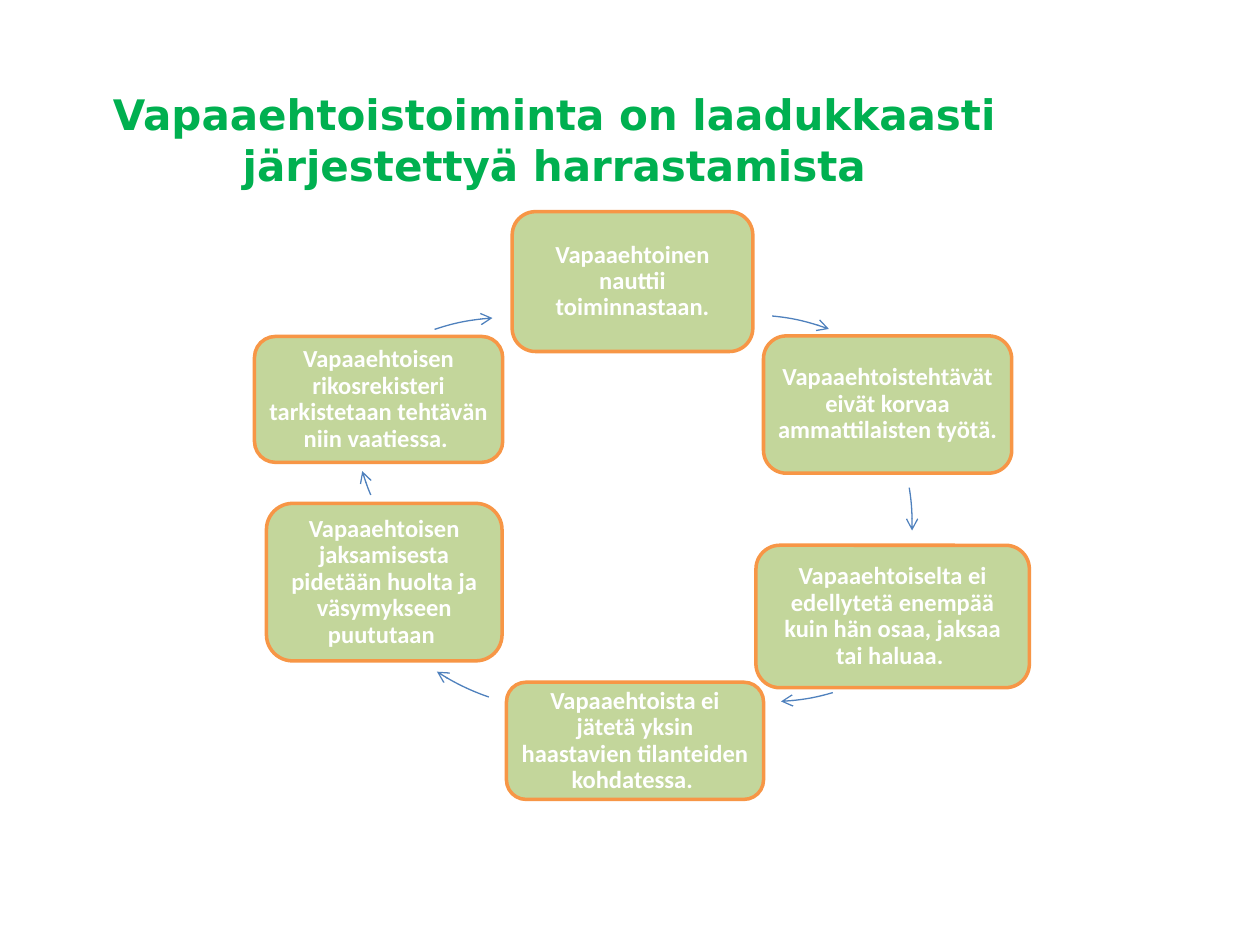
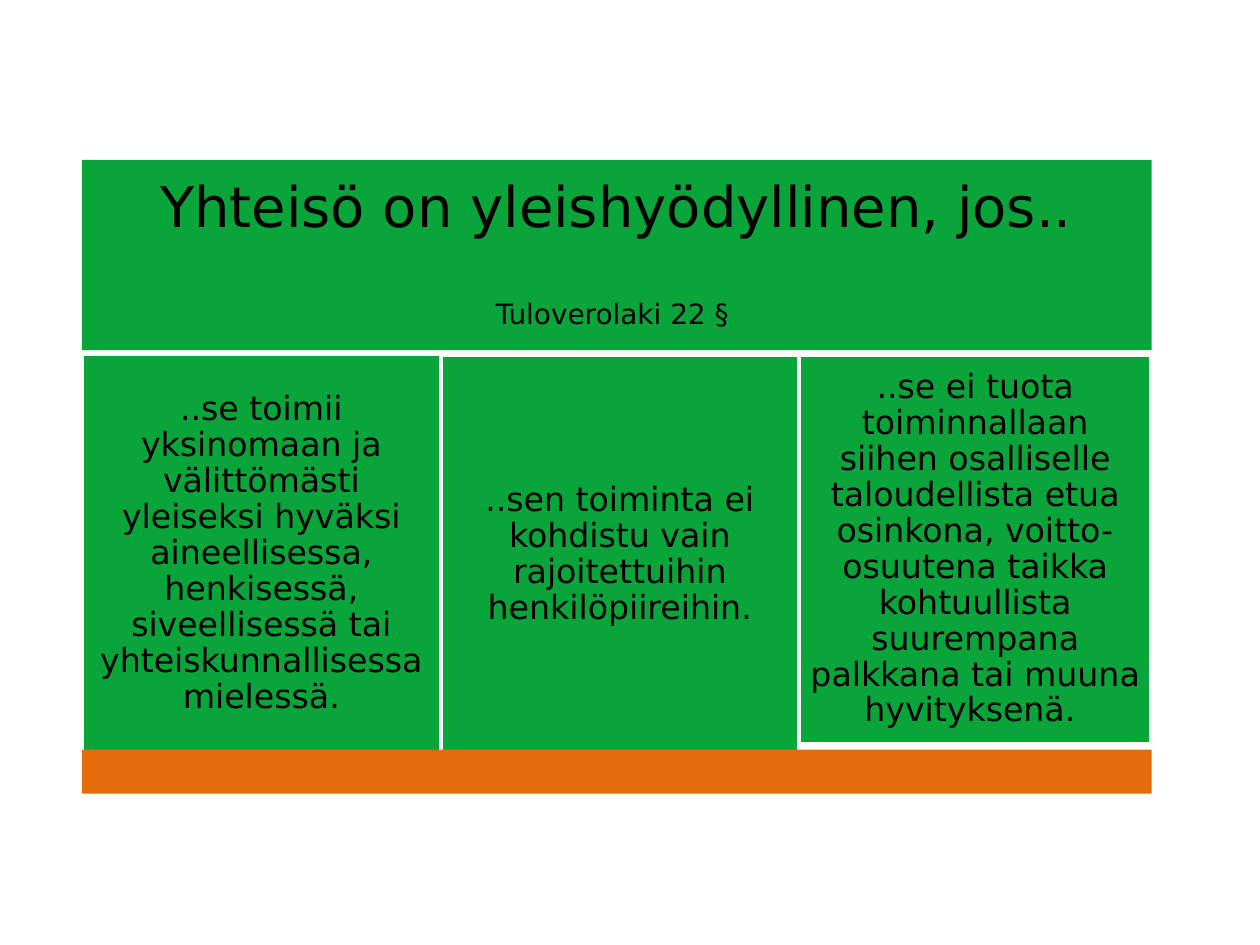
"""Build two slides about volunteering: a cycle of principles and a table of conditions."""
from dataclasses import dataclass
from math import cos, radians, sin
from typing import Any, NamedTuple

from lxml import etree
from pptx import Presentation
from pptx.dml import color
from pptx.enum import shapes, text
from pptx.oxml import ns
from pptx.util import Emu, Inches, Pt

COLORS = {
    "title": "00B050", "green": "0AA53A", "orange": "E46C0A", "leaf": "C3D69B",
    "rim": "F79646", "arrow": "4F81BD", "white": "FFFFFF", "black": "000000",
}
WIDTH, HEIGHT = Inches(10), Inches(7.5)
ARC_RADIUS = round(0.183 * WIDTH)
ANGLE_UNIT = 60000
TITLE_ONLY = 5
BAND_LEFT, BAND_WIDTH = 6.5, 84.9
COLUMN_LEFT, COLUMN_STEP = 6.55, 28.45


class Area(NamedTuple):
    """A place in percent of the slide's width and height."""
    left: float
    top: float
    width: float
    height: float


@dataclass(frozen=True)
class Style:
    """The look of a text: font, colour, spacing and inner margin in inches."""
    font: str
    size: float
    ink: str
    bold: bool = False
    spacing: float = 1.0
    margin: float = 0.05


@dataclass(frozen=True)
class Card:
    """A filled shape with its text."""
    area: Area
    words: str


@dataclass(frozen=True)
class Arc:
    """An arrow on a circle, with its centre in percent and clockwise degrees from the top."""
    across: float
    down: float
    start: float
    end: float


HEADLINE = Style("DejaVu Sans", 24, "title", bold=True)
BANNER = Style("DejaVu Sans", 32, "black", spacing=0.9, margin=0.13)
BANNER_NOTE = Style("DejaVu Sans", 16, "black", spacing=0.9, margin=0.13)
PRINCIPLE = Style("Calibri", 14, "white", bold=True, spacing=0.9, margin=0.06)
CONDITION = Style("DejaVu Sans", 19, "black", spacing=0.9, margin=0.08)

PRINCIPLES = [
    Card(Area(40.65, 22.4, 19.1, 14.8), "Vapaaehtoinen nauttii toiminnastaan."),
    Card(Area(60.6, 35.55, 19.7, 14.53),
         "Vapaaehtoistehtävät eivät korvaa ammattilaisten työtä. "),
    Card(Area(60, 57.7, 21.7, 15.07),
         "Vapaaehtoiselta ei edellytetä enempää kuin hän osaa, jaksaa tai haluaa. "),
    Card(Area(40.2, 72.2, 20.4, 12.4),
         "Vapaaehtoista ei jätetä yksin haastavien tilanteiden kohdatessa. "),
    Card(Area(21.15, 53.27, 18.7, 16.67),
         "Vapaaehtoisen jaksamisesta pidetään huolta ja väsymykseen puututaan "),
    Card(Area(20.2, 35.6, 19.7, 13.33),
         "Vapaaehtoisen rikosrekisteri tarkistetaan tehtävän niin vaatiessa. "),
]
ARCS = [
    Arc(59.5, 57.73, 5.6, 20.1), Arc(54.1, 55.47, 80.9, 91.6),
    Arc(61, 49.87, 163.8, 176.9), Arc(44.7, 50.67, 198.8, 213.2),
    Arc(46.3, 42.93, 247.2, 253.5), Arc(40.3, 58, 341.5, 356.2),
]
CONDITIONS = [
    Card(Area(COLUMN_LEFT, 37.47, 28.4, 42.27),
         "..se toimii yksinomaan ja välittömästi yleiseksi hyväksi aineellisessa, "
         "henkisessä, siveellisessä tai yhteiskunnallisessa mielessä."),
    Card(Area(COLUMN_LEFT + COLUMN_STEP, 37.6, 28.4, 42.27),
         "..sen toiminta ei kohdistu vain rajoitettuihin henkilöpiireihin."),
    Card(Area(COLUMN_LEFT + 2 * COLUMN_STEP, 37.55, 27.9, 41.2),
         "..se ei tuota toiminnallaan siihen osalliselle taloudellista etua osinkona, "
         "voitto-osuutena taikka kohtuullista suurempana palkkana tai muuna hyvityksenä. "),
]


def assign(target: Any, values: dict[str, Any]) -> None:
    """Set every named attribute of the target."""
    for name, value in values.items():
        setattr(target, name, value)


def rgb(name: str) -> color.RGBColor:
    """Look up a palette colour."""
    return color.RGBColor.from_string(COLORS[name])


def measure(area: Area) -> dict[str, Emu]:
    """Turn shares of the slide into lengths."""
    return {
        name: Emu(round(share * side / 100))
        for name, share, side in zip(area._fields, area, (WIDTH, HEIGHT) * 2)
    }


def paint(box: Any, fill: str | None, line: str | None = None, weight: float = 2) -> None:
    """Set the fill and outline of a shape."""
    if fill:
        box.fill.solid()
        box.fill.fore_color.rgb = rgb(fill)
    else:
        box.fill.background()
    if line:
        box.line.color.rgb = rgb(line)
        box.line.width = Pt(weight)
    else:
        box.line.fill.background()


def style_paragraph(para: Any, style: Style) -> None:
    """Format a centred paragraph."""
    assign(para, {"alignment": text.PP_ALIGN.CENTER, "line_spacing": style.spacing})
    for span in para.runs:
        assign(span.font, {"name": style.font, "size": Pt(style.size), "bold": style.bold})
        span.font.color.rgb = rgb(style.ink)


def write(box: Any, lines: list[tuple[str, Style]]) -> None:
    """Fill a box with one paragraph for each line, centred both ways."""
    frame = box.text_frame
    margin = Inches(lines[0][1].margin)
    assign(frame, {
        "text": "\n".join(words for words, _ in lines),
        "word_wrap": True,
        "auto_size": text.MSO_AUTO_SIZE.NONE,
        "vertical_anchor": text.MSO_ANCHOR.MIDDLE,
        **{f"margin_{side}": margin for side in ("left", "top", "right", "bottom")},
    })
    for para, (_, style) in zip(frame.paragraphs, lines):
        style_paragraph(para, style)


def add_box(page: Any, kind: Any, area: Area, fill: str, line: str | None = None) -> Any:
    """Draw a flat preset shape."""
    box = page.shapes.add_shape(kind, **measure(area))
    box.shadow.inherit = False
    paint(box, fill, line)
    return box


def add_title(page: Any, area: Area, lines: list[tuple[str, Style]]) -> Any:
    """Move and write the title placeholder."""
    title = page.shapes.title
    assign(title, measure(area))
    write(title, lines)
    return title


def add_arc(page: Any, arc: Arc) -> None:
    """Draw a curved arrow in the frame of its whole circle."""
    left = round(arc.across * WIDTH / 100) - ARC_RADIUS
    top = round(arc.down * HEIGHT / 100) - ARC_RADIUS
    size = 2 * ARC_RADIUS
    start_x, start_y = (
        round(ARC_RADIUS * (1 + share))
        for share in (sin(radians(arc.start)), -cos(radians(arc.start)))
    )
    builder = page.shapes.build_freeform(0, 0)
    builder.add_line_segments([(size, size)], close=False)
    curve = builder.convert_to_shape(left, top)
    curve.shadow.inherit = False
    paint(curve, None, "arrow", 0.75)
    find = {tag: curve.element.find(f".//{ns.qn(tag)}")
            for tag in ("a:path", "a:moveTo", "a:lnTo", "a:ln")}
    assign(find["a:moveTo"][0], {"x": Emu(start_x), "y": Emu(start_y)})
    find["a:path"].remove(find["a:lnTo"])
    angles = {"stAng": (arc.start + 270) % 360, "swAng": arc.end - arc.start}
    etree.SubElement(
        find["a:path"], ns.qn("a:arcTo"), wR=str(ARC_RADIUS), hR=str(ARC_RADIUS),
        **{name: str(round(angle * ANGLE_UNIT)) for name, angle in angles.items()})
    etree.SubElement(find["a:ln"], ns.qn("a:tailEnd"), type="arrow")


def build_cycle(deck: Any) -> None:
    """Add the slide with the cycle of principles."""
    page = deck.slides.add_slide(deck.slide_layouts[TITLE_ONLY])
    title = add_title(page, Area(3.8, 4.27, 80.4, 16.67), [
        ("Vapaaehtoistoiminta on laadukkaasti järjestettyä harrastamista", HEADLINE)])
    title.text_frame.margin_top = Inches(0.37)
    for card, arc in zip(PRINCIPLES, ARCS):
        box = add_box(page, shapes.MSO_SHAPE.ROUNDED_RECTANGLE, card.area, "leaf", "rim")
        write(box, [(card.words, PRINCIPLE)])
        add_arc(page, arc)


def build_conditions(deck: Any) -> None:
    """Add the slide with the banner, three conditions and the closing band."""
    page = deck.slides.add_slide(deck.slide_layouts[TITLE_ONLY])
    title = add_title(page, Area(BAND_LEFT, 16.93, BAND_WIDTH, 20.13), [
        ("Yhteisö on yleishyödyllinen, jos..", BANNER),
        ("Tuloverolaki 22 § ", BANNER_NOTE)])
    paint(title, "green")
    title.text_frame.paragraphs[1].space_before = Pt(34.5)
    for card in CONDITIONS:
        box = add_box(page, shapes.MSO_SHAPE.RECTANGLE, card.area, "green", "white")
        write(box, [(card.words, CONDITION)])
    add_box(page, shapes.MSO_SHAPE.RECTANGLE,
            Area(BAND_LEFT, 79.33, BAND_WIDTH, 4.67), "orange")


def main() -> None:
    """Build and save the deck."""
    deck = Presentation()
    assign(deck, {"slide_width": WIDTH, "slide_height": HEIGHT})
    build_cycle(deck)
    build_conditions(deck)
    deck.save("out.pptx")


if __name__ == "__main__":
    main()
